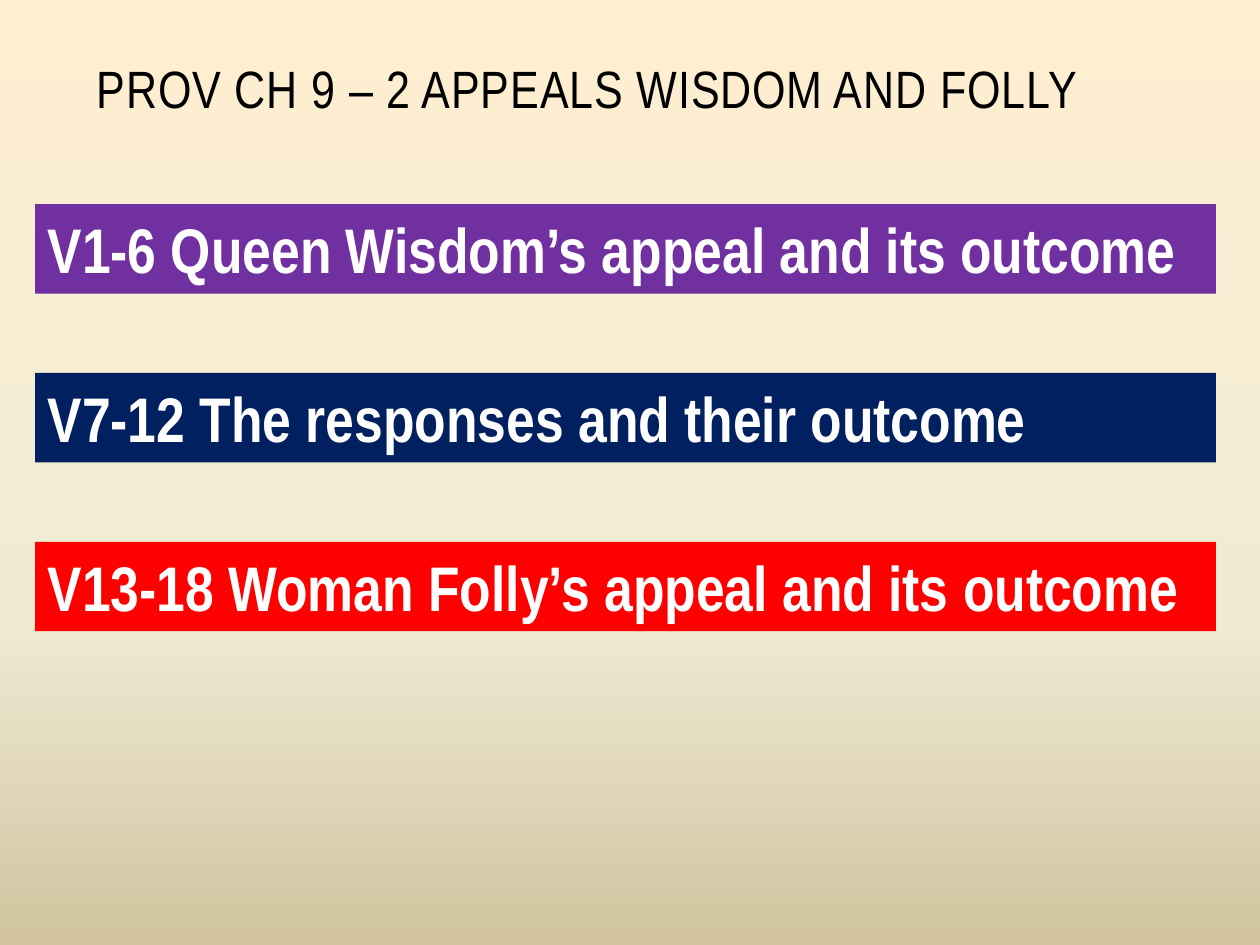
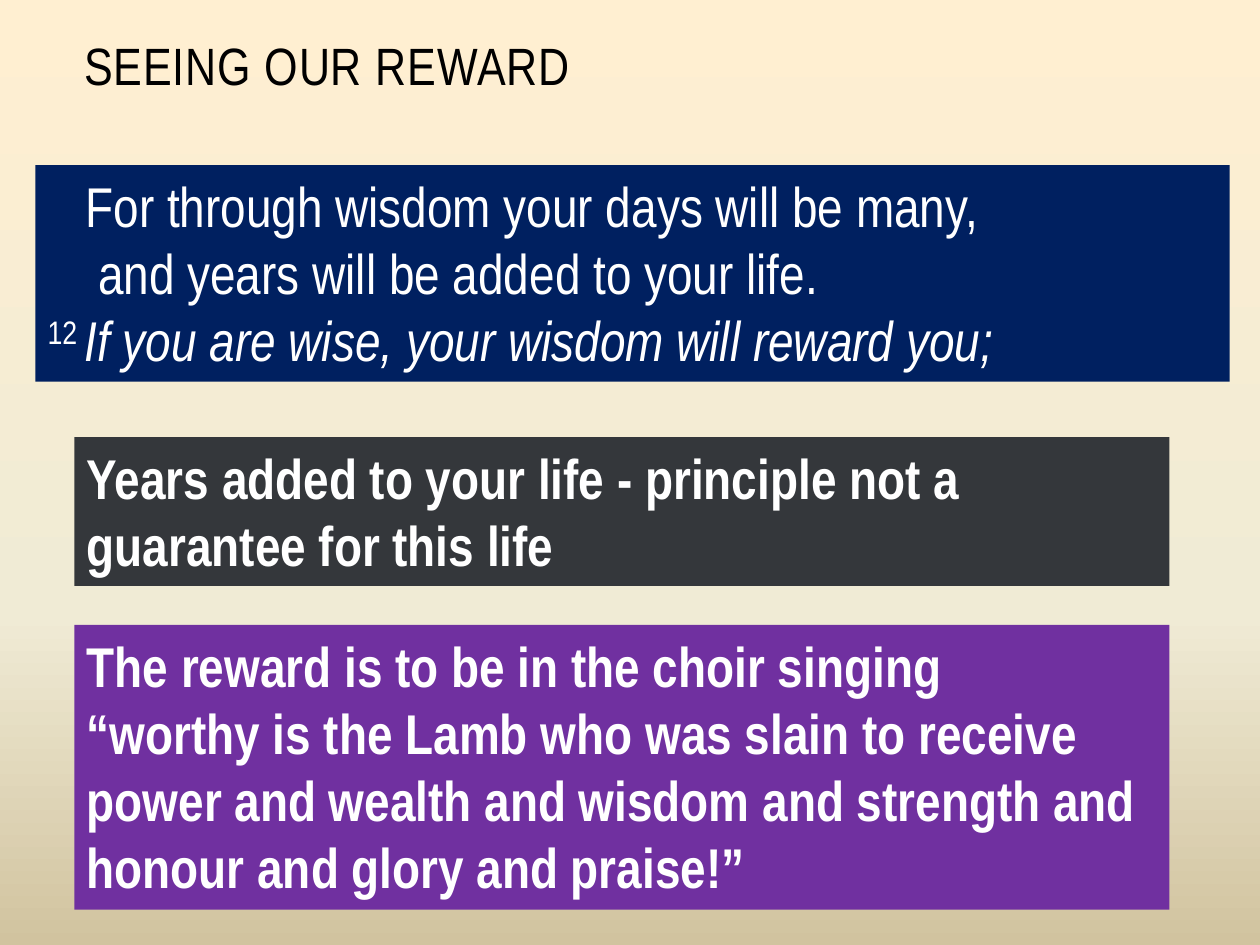
from lxml import etree
from pptx import Presentation
from pptx.dml.color import RGBColor
from pptx.enum.shapes import MSO_SHAPE
from pptx.enum.text import MSO_ANCHOR, MSO_AUTO_SIZE
from pptx.oxml.ns import qn
from pptx.util import Inches, Pt

RECT = MSO_SHAPE.RECTANGLE
TOP, LOW = MSO_ANCHOR.TOP, MSO_ANCHOR.BOTTOM
GROW, FIXED = MSO_AUTO_SIZE.SHAPE_TO_FIT_TEXT, MSO_AUTO_SIZE.NONE

FONT = "Arial Narrow"
BLACK = RGBColor(0x00, 0x00, 0x00)
WHITE = RGBColor(0xFF, 0xFF, 0xFF)
PURPLE = RGBColor(0x70, 0x30, 0xA0)
NAVY = RGBColor(0x00, 0x20, 0x60)
RED = RGBColor(0xFF, 0x00, 0x00)
SLATE = RGBColor(0x34, 0x37, 0x3B)
# Background stops: share of the height, colour
STOPS = [(0, RGBColor(0xFF, 0xEF, 0xD1)), (65, RGBColor(0xF0, 0xEB, 0xD5)),
         (100, RGBColor(0xD1, 0xC3, 0x9F))]

# Grid of 100 columns by 75 rows
WIDE, HIGH = Inches(10), Inches(7.5)
COL, ROW = WIDE / 100, HIGH / 75
PAGE = (0, 0, 100, 75)


def place(box, x, y, w, h):
    """Turn grid cells inside a box into slide lengths."""
    left, top = box[:2]
    return (round((left + x) * COL), round((top + y) * ROW),
            round(w * COL), round(h * ROW))


def write(para, text, size=32, color=WHITE, bold=False, italic=False,
          rise=0, track=0):
    """Add one run; rise lifts it in percent, track spaces its letters."""
    run = para.add_run()
    run.text = text
    font = run.font
    font.name, font.size, font.color.rgb = FONT, Pt(size), color
    font.bold, font.italic = bold, italic
    if rise:
        font._element.set("baseline", str(rise * 1000))
    if track:
        font._element.set("spc", str(round(track * 100)))


def fill(shape, lines, anchor=TOP, fit=GROW, **form):
    """Write lines; each is (indent in columns, [(text, own format)])."""
    frame = shape.text_frame
    frame.word_wrap, frame.auto_size = True, fit
    frame.vertical_anchor = anchor
    for i, (indent, runs) in enumerate(lines):
        para = frame.add_paragraph() if i else frame.paragraphs[0]
        if indent:
            para._p.get_or_add_pPr().set("marL", str(round(indent * COL)))
        para.alignment = 1
        for text, own in runs:
            write(para, text, **{**form, **own})


def plain(*texts):
    return [(0, [(text, {})]) for text in texts]


def band(slide, spot, color, lines, **form):
    shape = slide.shapes.add_shape(RECT, *spot)
    shape.shadow.inherit = False
    shape.fill.solid()
    shape.fill.fore_color.rgb = color
    shape.line.fill.background()
    fill(shape, lines, **form)


def start(deck, title, box, x, y):
    """Add a slide with the shared background and title."""
    slide = deck.slides.add_slide(deck.slide_layouts[6])
    # Three-stop background, running downwards
    back = slide.background.fill
    back.gradient()
    back.gradient_angle = 270
    stops = slide._element.find(".//" + qn("a:gsLst"))
    for old in list(stops):
        stops.remove(old)
    for share, color in STOPS:
        stop = etree.SubElement(stops, qn("a:gs"), pos=str(share * 1000))
        etree.SubElement(stop, qn("a:srgbClr"), val=str(color))
    # Title
    head = slide.shapes.add_textbox(*place(box, x, y, 86.7, 6.9))
    fill(head, plain(title), anchor=LOW, fit=FIXED, size=30, color=BLACK,
         track=0.5)
    return slide


def outline(deck, box):
    """Three equal bands, one for each part of the chapter."""
    slide = start(deck, "PROV CH 9 – 2 APPEALS WISDOM AND FOLLY", box, 6.7, 3)
    parts = [("V1-6 Queen Wisdom’s appeal and its outcome", PURPLE),
             ("V7-12 The responses and their outcome", NAVY),
             ("V13-18 Woman Folly’s appeal and its outcome", RED)]
    for i, (text, color) in enumerate(parts):
        band(slide, place(box, 2.8, 16.2 + 13.4 * i, 93.7, 7.1), color,
             plain(text), size=36, bold=True)


def reward(deck, box):
    """A verse and two remarks on it."""
    slide = start(deck, "SEEING OUR REWARD", box, 5.7, 1.2)
    # Verse
    verse = [(3, [("For through wisdom your days will be many,", {})]),
             (4, [("and years will be added to your life.", {})]),
             (0, [("12 ", {"rise": 30}),
                  ("If you are wise, your wisdom will reward you;",
                   {"italic": True})])]
    band(slide, place(box, 2.8, 13.1, 94.8, 17.2), NAVY, verse)
    # Remarks
    notes = [(34.7, 11.8, SLATE,
              ["Years added to your life - principle not a guarantee "
               "for this life"]),
             (49.6, 22.6, PURPLE,
              ["The reward is to be in the choir singing",
               "“worthy is the Lamb who was slain to receive power and "
               "wealth and wisdom and strength and honour and glory and "
               "praise!”"])]
    for y, h, color, texts in notes:
        band(slide, place(box, 5.9, y, 86.9, h), color, plain(*texts),
             bold=True)


def main():
    deck = Presentation()
    deck.slide_width, deck.slide_height = WIDE, HIGH
    outline(deck, PAGE)
    reward(deck, PAGE)
    deck.save("out.pptx")


if __name__ == "__main__":
    main()
